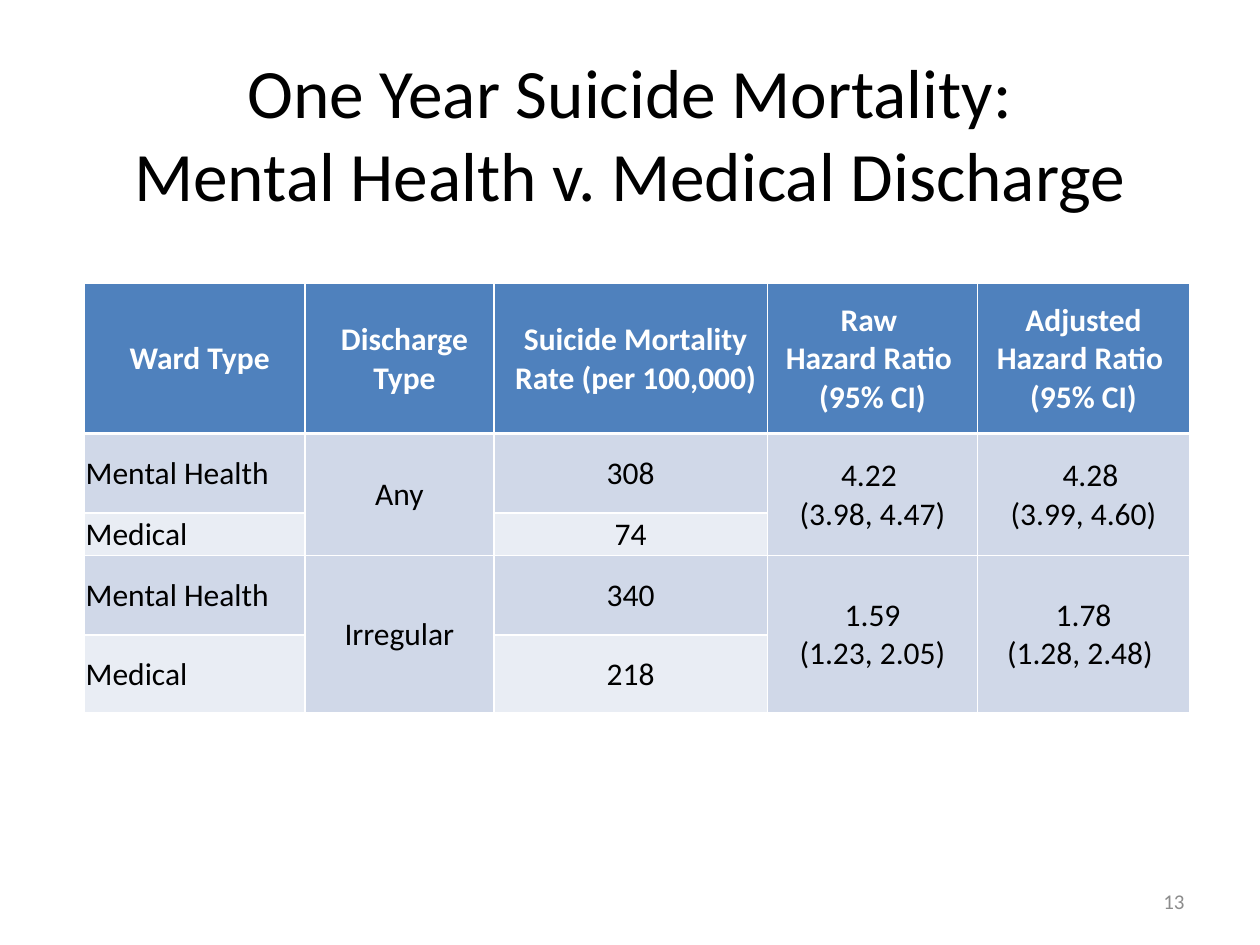
from lxml.etree import SubElement
from pptx import Presentation
from pptx.dml.color import RGBColor
from pptx.enum.text import MSO_ANCHOR, PP_ALIGN
from pptx.oxml.ns import qn
from pptx.util import Inches, Pt

WIDE, HIGH = 10, 7.5
COLORS = {"ink": "000000", "note": "8C8C8C", "white": "FFFFFF",
          "head": "4F81BD", "odd": "D0D8E8", "even": "E9EDF4"}
LEFT, MID, RIGHT = PP_ALIGN.LEFT, PP_ALIGN.CENTER, PP_ALIGN.RIGHT

COLS = [1.75, 1.5, 2.17, 1.67, 1.68]
ROWS = [1.19, 0.63, 0.34, 0.63, 0.62]
CELLS = [
    ["Ward Type", "Discharge Type", "Suicide Mortality Rate (per 100,000)",
     "Raw \nHazard Ratio \n(95% CI)", "Adjusted\nHazard Ratio \n(95% CI)"],
    ["Mental Health", "Any", "308", "4.22 \n(3.98, 4.47)", "4.28\n(3.99, 4.60)"],
    ["Medical", "", "74", "", ""],
    ["Mental Health", "Irregular", "340", "1.59\n(1.23, 2.05)", "1.78\n(1.28, 2.48) "],
    ["Medical", "", "218", "", ""],
]
MERGED = [(row, col) for row in (1, 3) for col in (1, 3, 4)]


def rgb(name):
    return RGBColor.from_string(COLORS[name])


class Page:
    def __init__(self, deck, font="Calibri"):
        self.font = font
        self.slide = deck.slides.add_slide(deck.slide_layouts[6])

    def place(self, x, y, w, h):
        """Turn shares of the slide's size into lengths."""
        return [Inches(share * size) for share, size in
                zip((x, y, w, h), (WIDE, HIGH, WIDE, HIGH))]

    def style(self, para, align, size, color, bold=False):
        para.alignment = align
        form = {"name": self.font, "size": Pt(size), "bold": bold}
        for key, value in form.items():
            setattr(para.font, key, value)
        para.font.color.rgb = rgb(color)

    def text(self, words, box, align, size, color):
        frame = self.slide.shapes.add_textbox(*self.place(*box)).text_frame
        frame.word_wrap = True
        frame.vertical_anchor = MSO_ANCHOR.MIDDLE
        para = frame.paragraphs[0]
        para.text = words
        self.style(para, align, size, color)

    def edge(self, cell, side, width):
        line = SubElement(cell._tc.get_or_add_tcPr(), qn(f"a:ln{side}"),
                          w=str(Pt(width)))
        fill = SubElement(line, qn("a:solidFill"))
        SubElement(fill, qn("a:srgbClr"), val=COLORS["white"])

    def cell(self, cell, words, row, col):
        head = row == 0
        form = {"text": words, "vertical_anchor": MSO_ANCHOR.MIDDLE,
                "margin_left": Inches(0.09 if head and col < 3 else 0.01),
                "margin_right": Inches(0.01), "margin_top": Inches(0.01),
                "margin_bottom": 0}
        for key, value in form.items():
            setattr(cell, key, value)
        for para in cell.text_frame.paragraphs:
            self.style(para, LEFT if col == 0 and not head else MID, 18,
                       "white" if head else "ink", head)
        for side in "LRTB":
            thick = (row, side) in ((0, "B"), (1, "T"))
            self.edge(cell, side, 1.5 if thick else 1)
        cell.fill.solid()
        cell.fill.fore_color.rgb = rgb("head" if head else "odd" if row % 2 else "even")

    def table(self, x, y):
        box = self.place(x, y, sum(COLS) / WIDE, sum(ROWS) / HIGH)
        table = self.slide.shapes.add_table(len(ROWS), len(COLS), *box).table
        for col, width in zip(table.columns, COLS):
            col.width = Inches(width)
        for row, height in zip(table.rows, ROWS):
            row.height = Inches(height)
        for row, line in enumerate(CELLS):
            for col, words in enumerate(line):
                self.cell(table.cell(row, col), words, row, col)
        for row, col in MERGED:
            table.cell(row, col).merge(table.cell(row + 1, col))
        return table


def main():
    deck = Presentation()
    deck.slide_width, deck.slide_height = Inches(WIDE), Inches(HIGH)
    page = Page(deck)
    page.text("One Year Suicide Mortality:\vMental Health v. Medical Discharge",
              (0.05, 0.04, 0.9, 0.2), MID, 39.6, "ink")
    table = page.table(0.067, 0.3)
    # The adjusted ratio sits slightly right of its interval.
    ratio = table.cell(1, 4).text_frame.paragraphs[0]
    ratio._p.get_or_add_pPr().set("marL", str(Inches(0.11)))
    page.text("13", (0.717, 0.927, 0.233, 0.053), RIGHT, 12, "note")
    deck.save("out.pptx")


if __name__ == "__main__":
    main()
